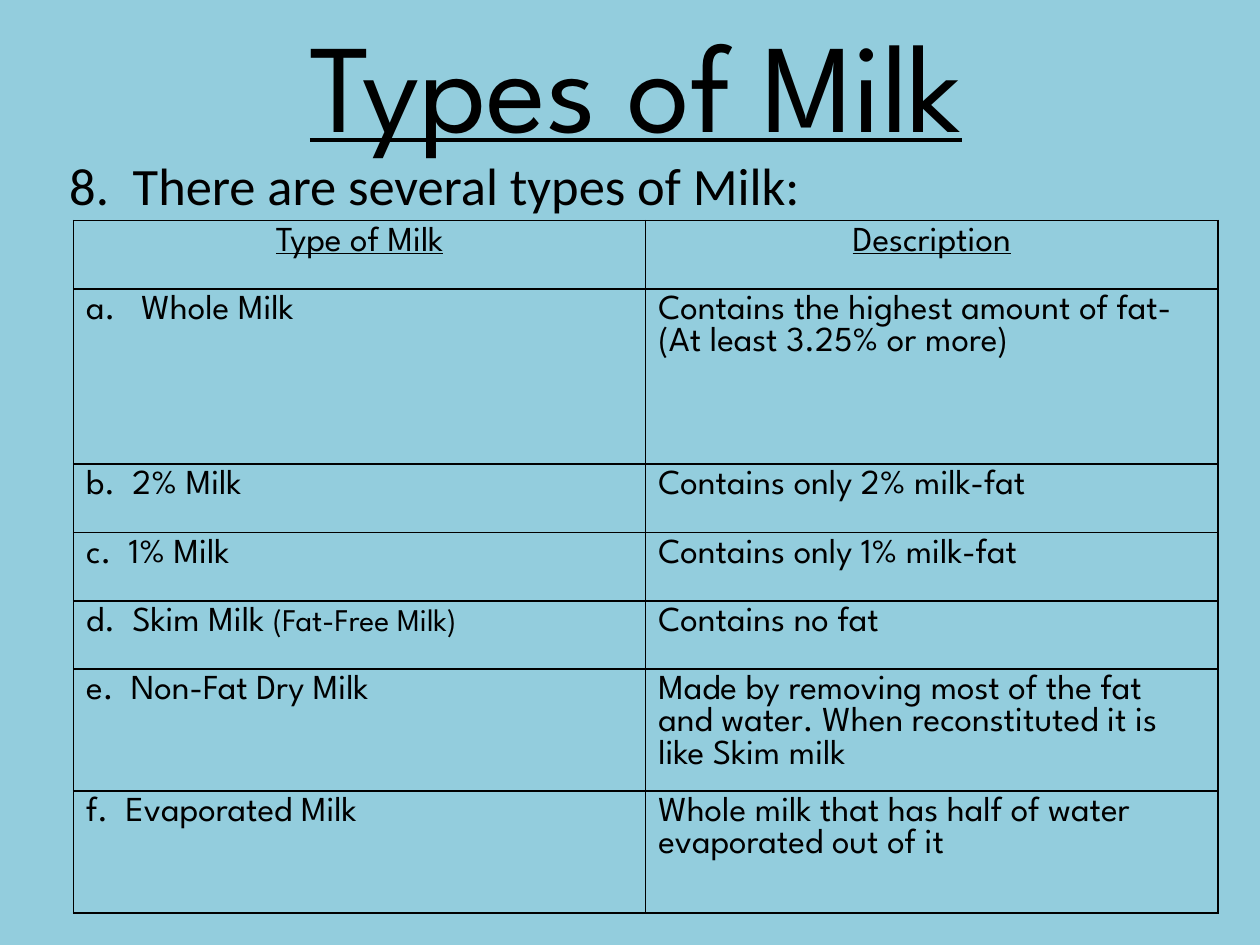
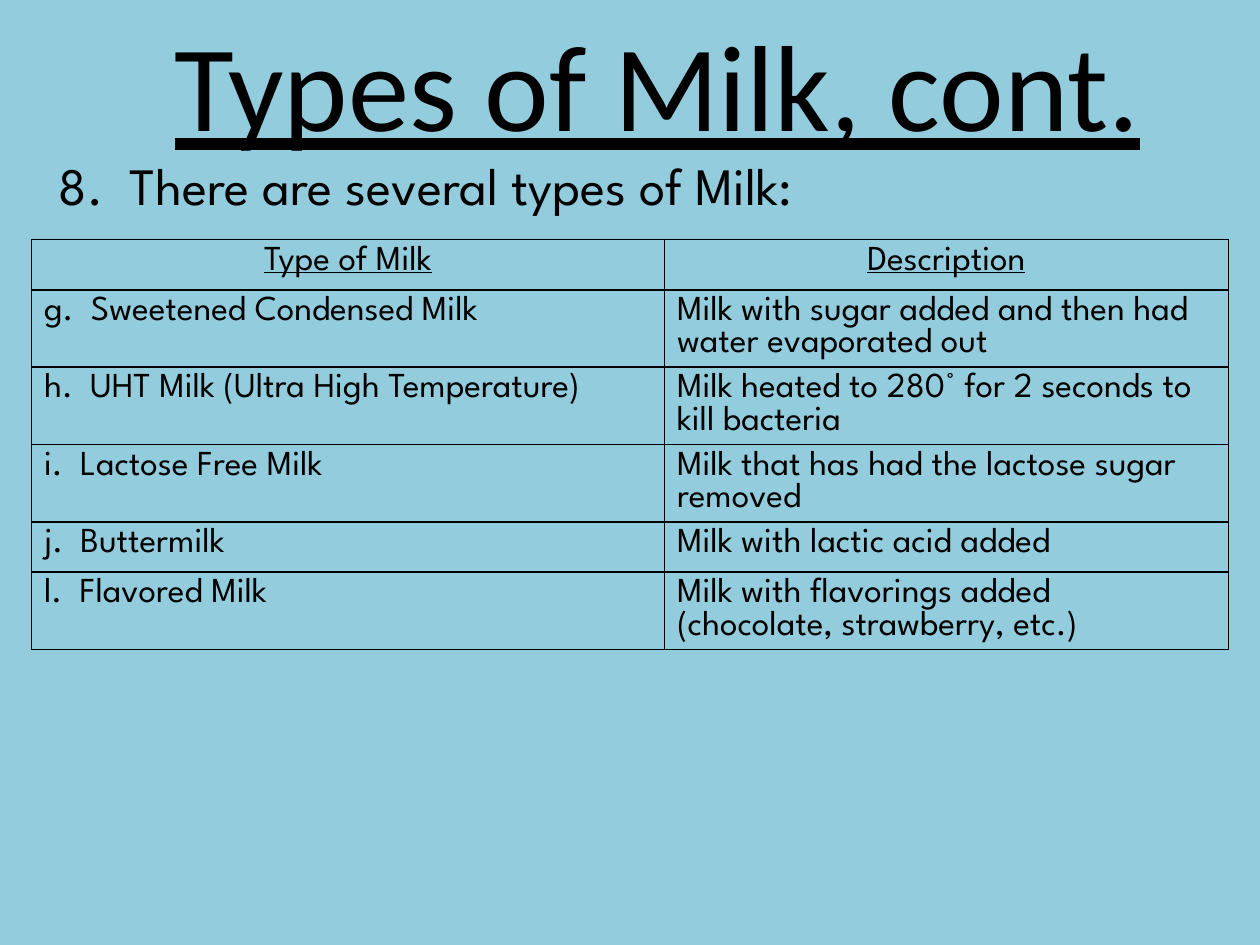
from lxml.etree import SubElement
from pptx import Presentation
from pptx.dml.color import RGBColor
from pptx.enum.text import MSO_ANCHOR, PP_ALIGN
from pptx.oxml.ns import qn
from pptx.util import Pt

COLORS = {"background": "93CDDD", "ink": "000000"}
SPARTAN, CALIBRI = "League Spartan", "Calibri"
HEADER = ("Type of Milk", "Description")

# Boxes are left, top, width, height in points
SLIDES = [
    {
        "title": ("Types of Milk", 72, SPARTAN, (60, 4, 607, 85.5)),
        "intro": (CALIBRI, (30.5, 84, 678, 48)),
        "table": (42, 126),
        "cols": (327, 327),
        "heights": (39.1, 100.2, 39.1, 39, 39, 69.75, 69.75),
        "rows": [
            ("a.   Whole Milk", "Contains the highest amount of fat-(At least 3.25% or more)"),
            ("b.  2% Milk", "Contains only 2% milk-fat"),
            ("c.  1% Milk", "Contains only 1% milk-fat"),
            ("d.  Skim Milk |(Fat-Free Milk)", "Contains no fat"),
            ("e.  Non-Fat Dry Milk",
             "Made by removing most of the fat and water. When reconstituted it is like Skim milk"),
            ("f.  Evaporated Milk", "Whole milk that has half of water evaporated out of it"),
        ],
    },
    {
        "title": ("Types of Milk, cont.", 70, CALIBRI, (84, 4.5, 583, 85.5)),
        "intro": (SPARTAN, (24.5, 84, 684, 48)),
        "table": (18, 136.8),
        "cols": (361.7, 322.3),
        "heights": (28.8, 44.2, 44.2, 44.2, 28.8, 44.2),
        "rows": [
            ("g.  Sweetened Condensed Milk", "Milk with sugar added and then had water evaporated out"),
            ("h.  UHT Milk (Ultra High Temperature)", "Milk heated to 280° for 2 seconds to kill bacteria"),
            ("i.  Lactose Free Milk", "Milk that has had the lactose sugar removed"),
            ("j.  Buttermilk", "Milk with lactic acid added"),
            ("l.  Flavored Milk", "Milk with flavorings added (chocolate, strawberry, etc.)"),
        ],
    },
]


def add_run(p, text, size, font, underline=False):
    r = p.add_run()
    r.text = text
    r.font.size = Pt(size)
    r.font.name = font
    r.font.bold = False
    r.font.underline = underline
    r.font.color.rgb = RGBColor.from_string(COLORS["ink"])


def add_text_box(s, box):
    tf = s.shapes.add_textbox(*map(Pt, box)).text_frame
    tf.word_wrap = True
    return tf


prs = Presentation()
prs.slide_width, prs.slide_height = Pt(720), Pt(540)

for data in SLIDES:
    s = prs.slides.add_slide(prs.slide_layouts[6])
    s.background.fill.solid()
    s.background.fill.fore_color.rgb = RGBColor.from_string(COLORS["background"])

    # Title
    title, size, font, box = data["title"]
    tf = add_text_box(s, box)
    tf.vertical_anchor = MSO_ANCHOR.MIDDLE
    p = tf.paragraphs[0]
    p.alignment = PP_ALIGN.CENTER
    add_run(p, title, size, font, underline=True)

    # Numbered intro line with a hanging indent
    font, box = data["intro"]
    p = add_text_box(s, box).paragraphs[0]
    p.space_before = Pt(2)
    pPr = p._p.get_or_add_pPr()
    pPr.set("marL", str(Pt(42.5)))
    pPr.set("indent", str(Pt(-40.5)))
    add_run(p, "8.  There are several types of Milk:", 30, font)

    # Table of milk types
    rows = [HEADER] + data["rows"]
    left, top = data["table"]
    table = s.shapes.add_table(
        len(rows), 2, Pt(left), Pt(top),
        Pt(sum(data["cols"])), Pt(sum(data["heights"]))).table
    table.first_row = table.horz_banding = False
    for column, width in zip(table.columns, data["cols"]):
        column.width = Pt(width)
    for row, height in zip(table.rows, data["heights"]):
        row.height = Pt(height)

    for i, texts in enumerate(rows):
        for j, text in enumerate(texts):
            cell = table.cell(i, j)
            p = cell.text_frame.paragraphs[0]
            p.alignment = PP_ALIGN.CENTER if i == 0 else PP_ALIGN.LEFT
            p.line_spacing = Pt(18.4)
            if i > 0 and j == 1:
                cell.margin_right = Pt(10)
            # Text after a bar is set smaller
            for part, size in zip(text.split("|"), (20, 18)):
                add_run(p, part, size, SPARTAN, underline=i == 0)

            # Thin border on all four sides, no fill
            tcPr = cell._tc.get_or_add_tcPr()
            for side in ("a:lnL", "a:lnR", "a:lnT", "a:lnB"):
                ln = SubElement(tcPr, qn(side), w=str(Pt(1)))
                fill = SubElement(ln, qn("a:solidFill"))
                SubElement(fill, qn("a:srgbClr"), val=COLORS["ink"])
            cell.fill.background()

prs.save("out.pptx")
